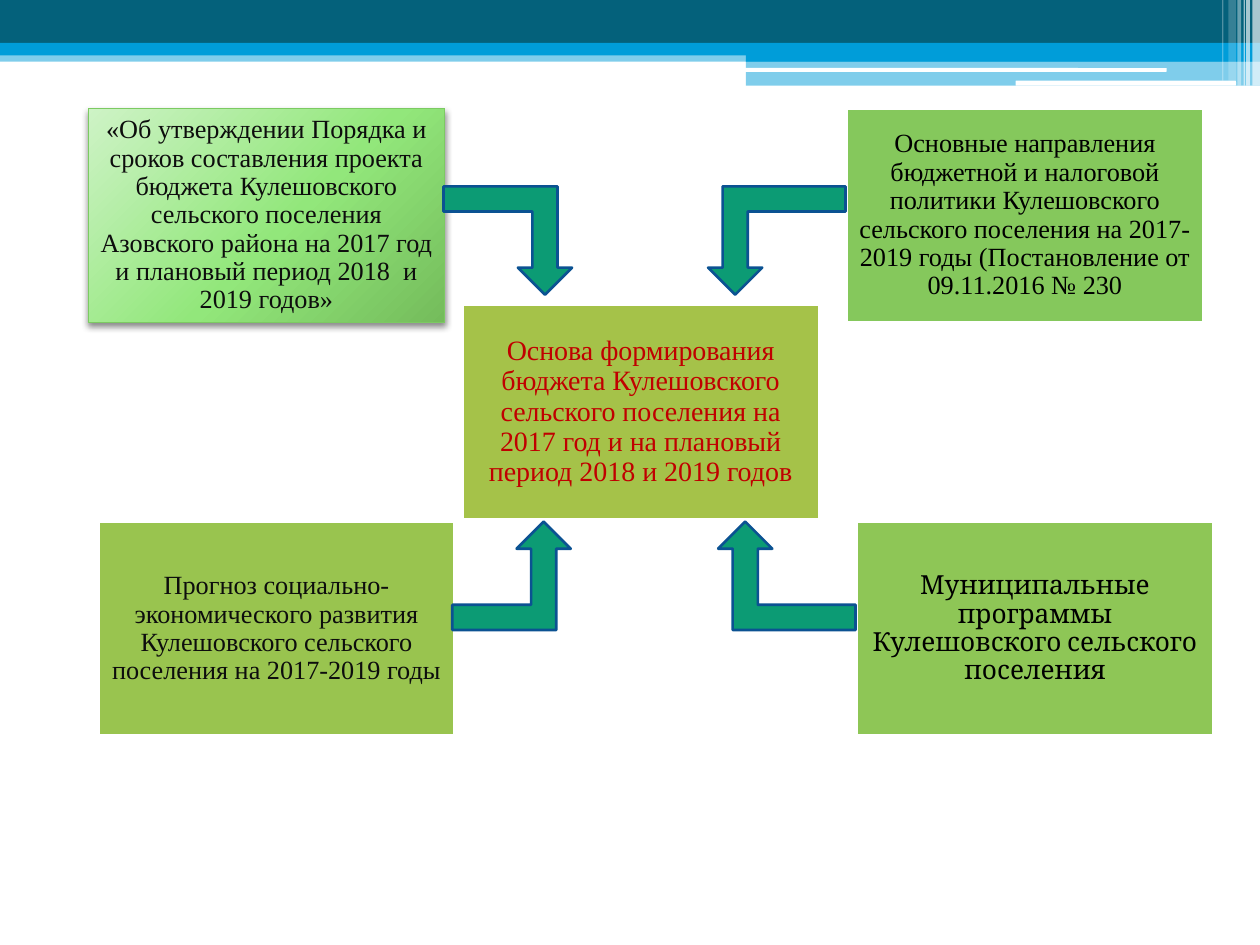
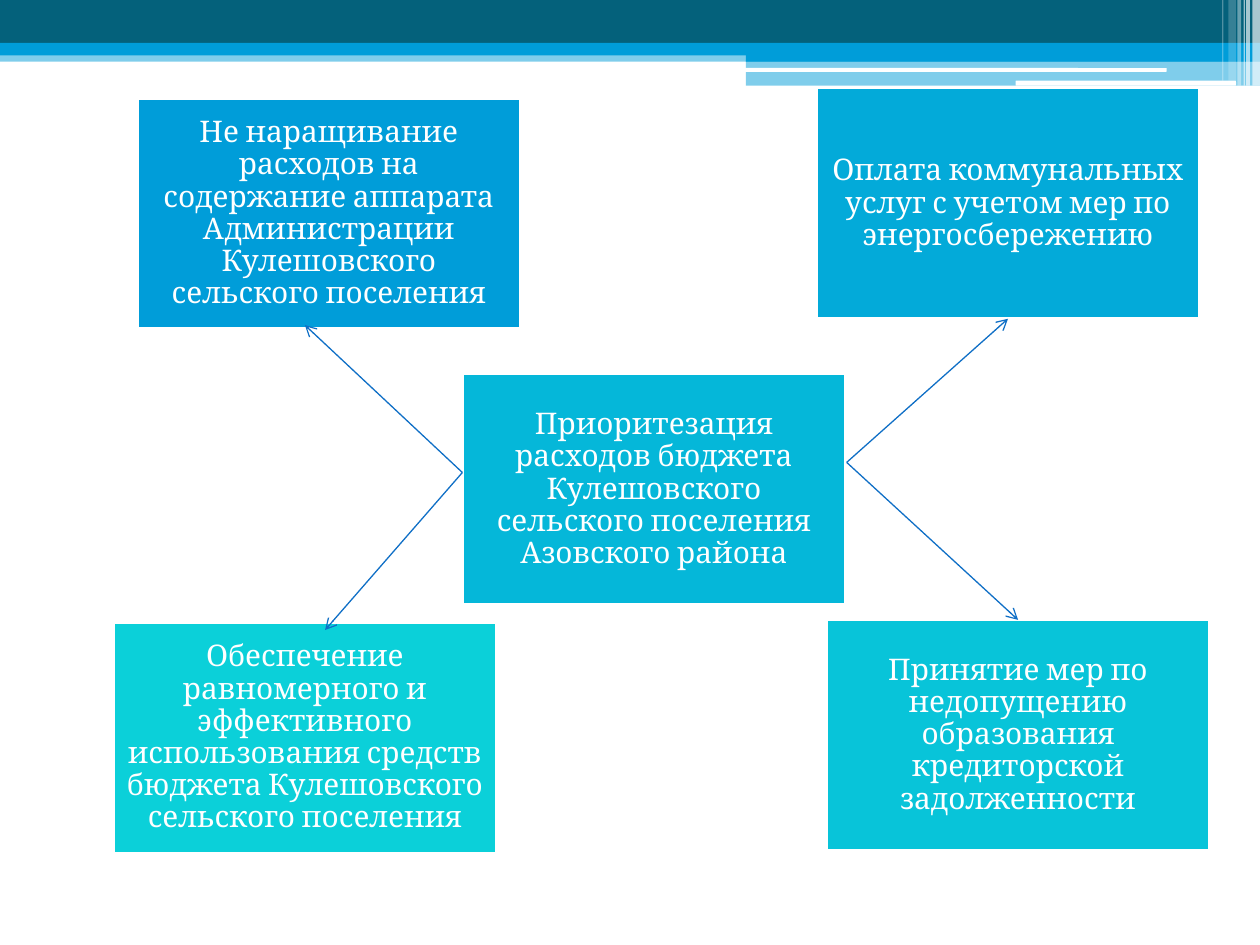
from lxml import etree
from pptx import Presentation
from pptx import util as u
from pptx.dml import color
from pptx.enum import shapes, text
from pptx.oxml import ns

KIND = shapes.MSO_SHAPE
NAVY, BLUE, WHITE, BLACK = "04617B", "009DD9", "FFFFFF", "000000"
INK, RED, GREEN, EDGE, LINE = "0D0D0D", "C00000", "0C9B74", "0B5292", "0F6FC6"
TIMES, SERIF = "Times New Roman", "Cambria"


def rgb(code):
    return color.RGBColor.from_string(code)


def node(base, tag, **attrs):
    """Add an XML child with the given attributes."""
    return etree.SubElement(base, ns.qn(tag), {k: str(v) for k, v in attrs.items()})


def tint(base, code, **mods):
    """Add a colour to an XML element, with changes such as alpha."""
    clr = node(base, "a:srgbClr", val=code)
    for name, val in mods.items():
        node(clr, "a:" + name, val=val * 1000)


def draw(slide, box, fill, kind=KIND.RECTANGLE, edge=None, width=1.5, alpha=None):
    """Add a preset shape with a flat fill and an optional edge."""
    shape = slide.shapes.add_shape(kind, *map(u.Inches, box))
    shape.shadow.inherit = False
    shape.fill.solid()
    shape.fill.fore_color.rgb = rgb(fill)
    if alpha:
        clr = shape.element.spPr.find(".//" + ns.qn("a:srgbClr"))
        node(clr, "a:alpha", val=alpha * 1000)
    if edge:
        shape.line.color.rgb = rgb(edge)
        shape.line.width = u.Pt(width)
    else:
        shape.line.fill.background()
    return shape


def write(shape, words, size=15, font=TIMES, ink=BLACK, inset=0.06):
    """Put centred text in a shape."""
    frame = shape.text_frame
    frame.word_wrap = True
    frame.vertical_anchor = text.MSO_ANCHOR.MIDDLE
    frame.margin_left = frame.margin_right = u.Inches(inset)
    frame.margin_top = frame.margin_bottom = u.Inches(inset)
    para = frame.paragraphs[0]
    para.alignment = text.PP_ALIGN.CENTER
    para.line_spacing = 0.9
    run = para.add_run()
    run.text = words
    run.font.size = u.Pt(size)
    run.font.name = font
    run.font.color.rgb = rgb(ink)


def card(slide, box, fill, words, edge=WHITE, width=1.5, **style):
    shape = draw(slide, box, fill, edge=edge, width=width)
    write(shape, words, **style)
    return shape


def glow(shape):
    """Give a card a round green gradient and a soft shadow."""
    props = shape.element.spPr
    grad = etree.Element(ns.qn("a:gradFill"), rotWithShape="1")
    stops = node(grad, "a:gsLst")
    for pos, code in ((0, "CEF3C6"), (55, "92E77B"), (100, "74BC5B")):
        tint(node(stops, "a:gs", pos=pos * 1000), code)
    way = node(grad, "a:path", path="circle")
    node(way, "a:fillToRect", l=-40000, t=-90000, r=140000, b=190000)
    props.replace(props.find(ns.qn("a:solidFill")), grad)
    shade = node(props.find(ns.qn("a:effectLst")), "a:outerShdw",
                 blurRad=u.Pt(4), dist=u.Pt(2), dir=5400000, rotWithShape=0)
    tint(shade, BLACK, alpha=45)


def bend(slide, box, *flips):
    """Add a bent arrow, mirrored as asked."""
    shape = draw(slide, box, GREEN, KIND.BENT_UP_ARROW, EDGE)
    shape.adjustments[0] = 0.232
    for flip in flips:
        shape.element.spPr.xfrm.set(flip, "1")


def link(slide, start, end, goal=None, side=0):
    """Add a thin arrow, joined to the goal's side when one is given."""
    line = slide.shapes.add_connector(
        shapes.MSO_CONNECTOR.STRAIGHT, *map(u.Inches, start + end))
    if goal is not None:
        line.end_connect(goal, side)
    line.line.color.rgb = rgb(LINE)
    line.line.width = u.Pt(0.75)
    props = line.element.spPr
    node(props.find(ns.qn("a:ln")), "a:tailEnd", type="arrow")
    node(props, "a:effectLst")


def header(slide):
    """Draw the bands shared by all slides."""
    draw(slide, (0, 0.4, 10, 0.09), BLUE, alpha=50)
    draw(slide, (0, 0, 10, 0.34), NAVY)
    draw(slide, (0, 0.34, 10, 0.1), BLUE)
    draw(slide, (5.92, 0.39, 4.08, 0.1), BLUE)
    draw(slide, (5.92, 0.48, 4.08, 0.2), BLUE, alpha=50)
    for box in ((5.91, 0.54, 3.35, 0.03), (8.06, 0.64, 1.75, 0.04)):
        draw(slide, box, WHITE, KIND.ROUNDED_RECTANGLE)
    # Pale stripes at the right end
    for left, wide, high, alpha in (
            (9.94, 0.06, 0.68, 65), (9.89, 0.03, 0.68, 65), (9.87, 0.01, 0.68, 60),
            (9.82, 0.03, 0.68, 40), (9.75, 0.06, 0.64, 20), (9.7, 0.01, 0.64, 30)):
        draw(slide, (left, 0, wide, high), WHITE, alpha=alpha)


def basis(slide):
    """What the budget is based on."""
    size = (2.83, 1.7)
    order = card(slide, (0.7, 0.86, *size), "92E77B",
                 "«Об утверждении Порядка и сроков составления проекта бюджета "
                 "Кулешовского сельского поселения Азовского района на 2017 год "
                 "и плановый период 2018  и 2019 годов»",
                 edge="7CCA62", width=0.75, ink=INK)
    glow(order)
    card(slide, (6.72, 0.86, *size), "85C85C",
         "Основные направления бюджетной и налоговой политики Кулешовского "
         "сельского поселения на 2017-2019 годы (Постановление от 09.11.2016 № 230")
    card(slide, (6.8, 4.14, *size), "8EC656",
         "Муниципальные программы Кулешовского сельского поселения", font=SERIF)
    card(slide, (0.78, 4.14, *size), "99C44F",
         "Прогноз социально-экономического развития Кулешовского сельского "
         "поселения на 2017-2019 годы", ink=INK)
    card(slide, (3.67, 2.42, *size), "A5C249",
         "Основа формирования бюджета Кулешовского сельского поселения на "
         "2017 год и на плановый период 2018 и 2019 годов",
         size=16, ink=RED, inset=0.07)
    # Arrows to the centre
    bend(slide, (3.59, 4.14, 0.94, 0.86))
    bend(slide, (5.7, 4.14, 1.09, 0.86), "flipH")
    bend(slide, (3.52, 1.48, 1.02, 0.86), "flipV")
    bend(slide, (5.62, 1.48, 1.09, 0.86), "flipH", "flipV")


def goals(slide):
    """Spending priorities around the centre."""
    cards = [card(slide, (left, top, 3.04, 1.83), fill, words,
                  size=17, font=SERIF, ink=WHITE, inset=0.07)
             for left, top, fill, words in (
        (1.09, 0.78, BLUE, "Не наращивание расходов на содержание аппарата "
         "Администрации Кулешовского сельского поселения"),
        (6.48, 0.7, "03AAD9", "Оплата коммунальных услуг с учетом мер по "
         "энергосбережению"),
        (3.67, 2.97, "05B7D9", "Приоритезация расходов бюджета Кулешовского "
         "сельского поселения Азовского района"),
        (6.56, 4.92, "08C4D9", "Принятие мер по недопущению образования "
         "кредиторской задолженности"),
        (0.9, 4.94, "0BD0D9", "Обеспечение равномерного и эффективного "
         "использования средств бюджета Кулешовского сельского поселения"))]
    # Arrows from the centre
    west, east = (3.67, 3.75), (6.72, 3.67)
    link(slide, west, (2.58, 5))
    link(slide, west, (2.42, 2.58))
    link(slide, east, (7.97, 2.5), cards[1], 2)
    link(slide, east, (8.12, 4.92), cards[3], 0)


def main():
    deck = Presentation()
    deck.slide_width, deck.slide_height = u.Inches(10), u.Inches(7.5)
    for build in (basis, goals):
        slide = deck.slides.add_slide(deck.slide_layouts[6])
        header(slide)
        build(slide)
    deck.save("out.pptx")


if __name__ == "__main__":
    main()
